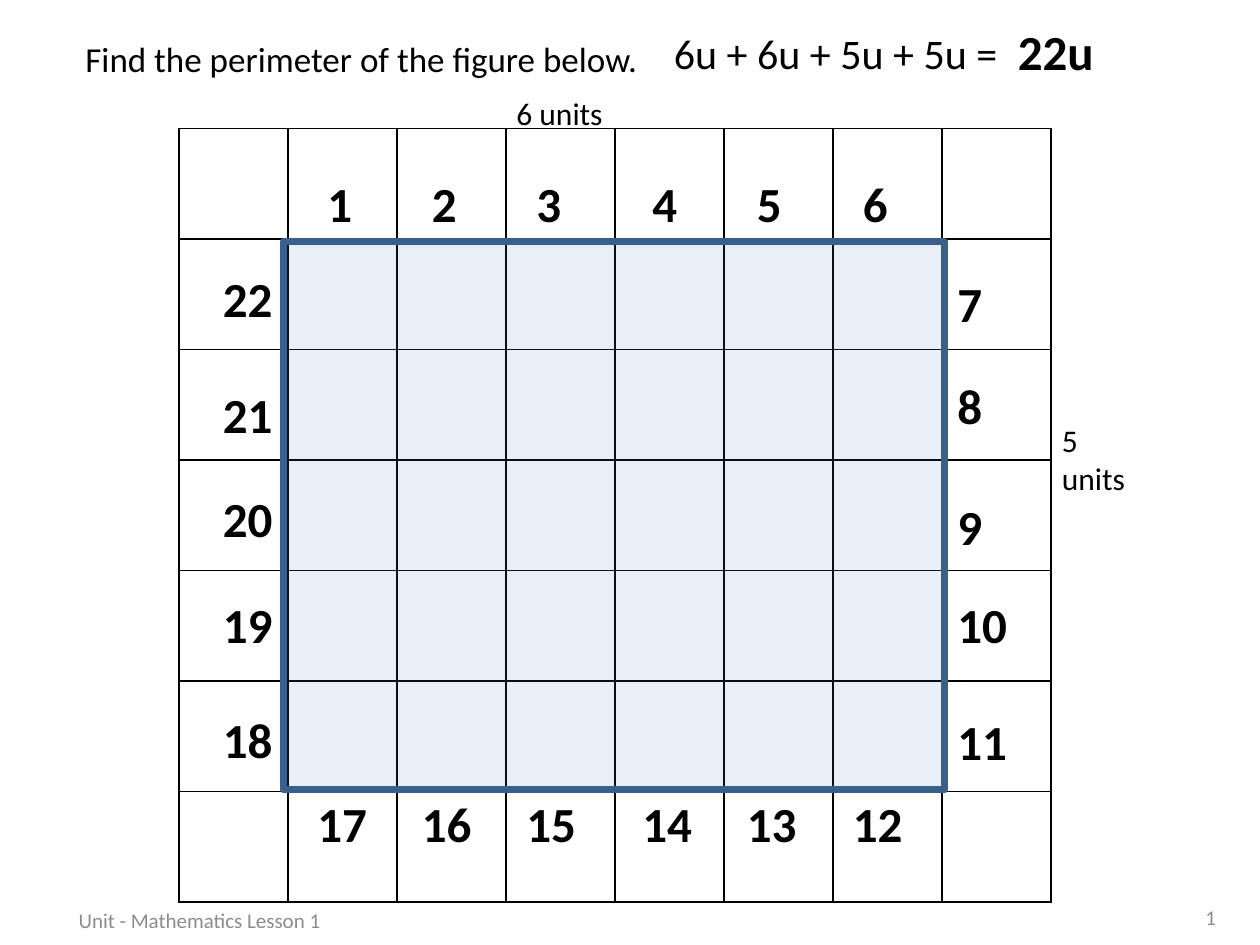
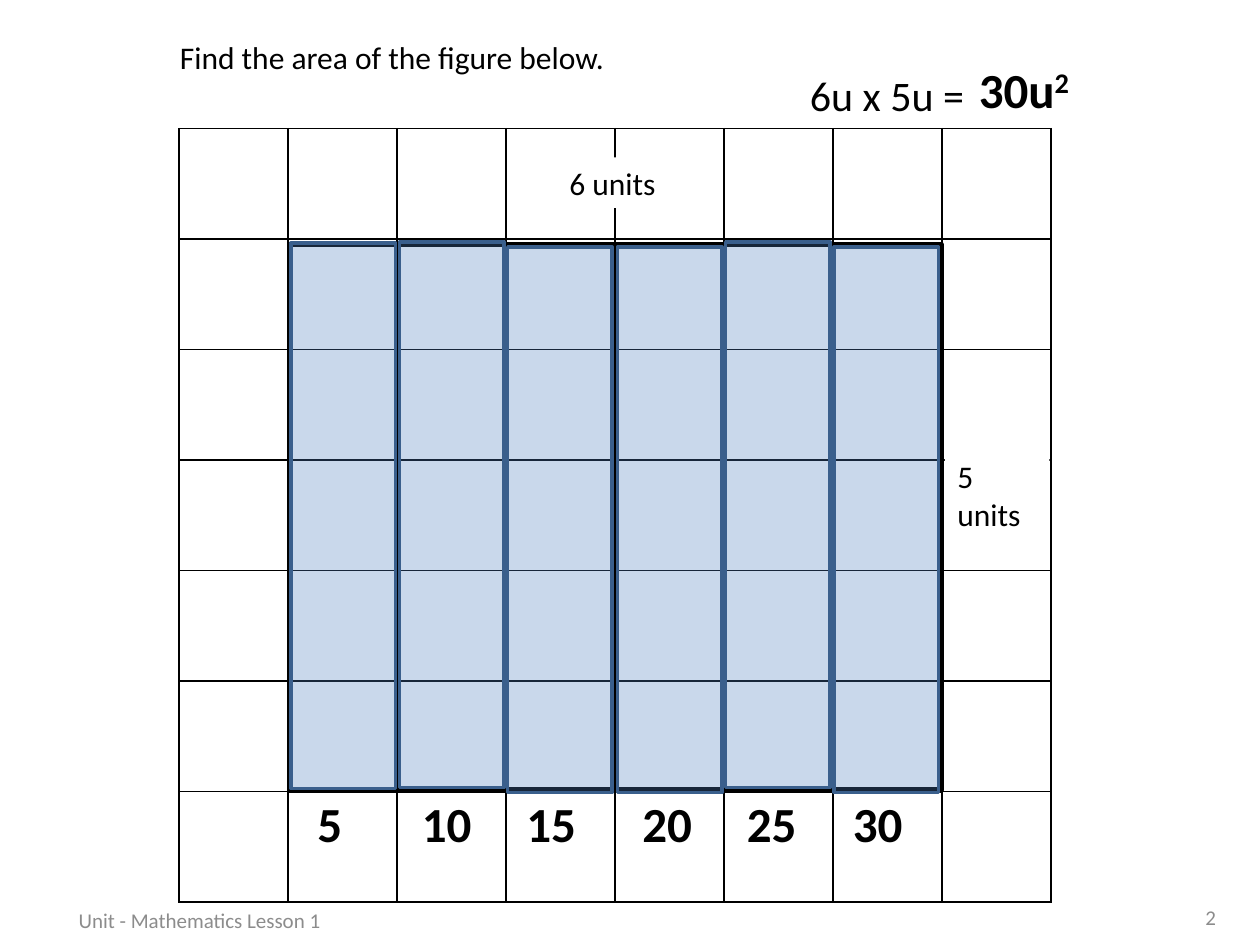
from lxml import etree
from pptx import Presentation
from pptx.dml.color import RGBColor
from pptx.enum.shapes import MSO_SHAPE
from pptx.enum.text import MSO_ANCHOR, MSO_AUTO_SIZE, PP_ALIGN
from pptx.oxml.ns import qn
from pptx.util import Emu, Pt

RECT = MSO_SHAPE.RECTANGLE
TOP, MIDDLE = MSO_ANCHOR.TOP, MSO_ANCHOR.MIDDLE
LEFT, CENTER, RIGHT = PP_ALIGN.LEFT, PP_ALIGN.CENTER, PP_ALIGN.RIGHT
FIT, FIXED = MSO_AUTO_SIZE.SHAPE_TO_FIT_TEXT, MSO_AUTO_SIZE.NONE

EMU_PER_PX = 9144
FONT = "Calibri"
COLORS = {"ink": "000000", "paper": "FFFFFF", "blue": "4F81BD",
          "outline": "3A5F8C", "footer": "8C8C8C"}
FOOTER = "Unit - Mathematics Lesson 1"

GRID_COLS, GRID_ROWS = 8, 7
COUNT_X = [242, 325, 408, 500, 583, 667]
TOP_COUNT_Y, BOTTOM_COUNT_Y = 133, 625
RIGHT_COUNT_Y = [212, 293, 389, 467, 560]
LEFT_COUNT_Y = [558, 467, 383, 300, 208]
STRIP_Y = [193, 192, 196, 196, 192, 196]
STRIP_X, STRIP_PITCH = 231, 86.2


def px(n):
    """Turn px into EMU."""
    return Emu(n * EMU_PER_PX)


def rgb(name):
    """Look up a named colour."""
    return RGBColor.from_string(COLORS[name])


def box(*at):
    """Turn left, top, width and height from px into EMU."""
    return [px(n) for n in at]


def add_run(p, text, size, bold=False, color="ink", baseline=0):
    """Append one formatted run to a paragraph."""
    r = p.add_run()
    r.text = text
    r.font.name, r.font.size, r.font.bold = FONT, Pt(size), bold
    r.font.color.rgb = rgb(color)
    if baseline:
        r.font._element.set("baseline", str(baseline * 1000))


def add_text(shapes, at, text, size, bold=False, color="ink", align=LEFT,
             anchor=TOP, fit=FIT, fill=None):
    """Add a wrapping text box and return its paragraph."""
    sp = shapes.add_textbox(*box(*at))
    if fill:
        sp.fill.solid()
        sp.fill.fore_color.rgb = rgb(fill)
    tf = sp.text_frame
    tf.word_wrap, tf.auto_size, tf.vertical_anchor = True, fit, anchor
    p = tf.paragraphs[0]
    p.alignment = align
    add_run(p, text, size, bold, color)
    return p


def add_count(shapes, x, y, n):
    """Add one bold counting number."""
    add_text(shapes, (x, y, 50 if n < 10 else 67, 57), str(n), 28, bold=True)


def add_rect(shapes, at, line, width, alpha=None):
    """Add an outlined rectangle, tinted blue when alpha is given."""
    sp = shapes.add_shape(RECT, *box(*at))
    sp.shadow.inherit = False
    sp.line.color.rgb, sp.line.width = rgb(line), Pt(width)
    if alpha is None:
        sp.fill.background()
    else:
        sp.fill.solid()
        sp.fill.fore_color.rgb = rgb("blue")
        clr = sp._element.spPr.find(qn("a:solidFill"))[0]
        etree.SubElement(clr, qn("a:alpha"), val=str(alpha * 1000))


def style_cell(cell):
    """Give a cell a white fill and thin black borders."""
    tcPr = cell._tc.get_or_add_tcPr()
    for side in "LRTB":
        ln = etree.SubElement(tcPr, qn(f"a:ln{side}"), w=str(Pt(1)))
        fill = etree.SubElement(ln, qn("a:solidFill"))
        etree.SubElement(fill, qn("a:srgbClr"), val=COLORS["ink"])
    cell.fill.solid()
    cell.fill.fore_color.rgb = rgb("paper")


def add_grid(s):
    """Add the table that serves as unit grid."""
    left, top, width, height = box(142, 102, 692, 614)
    table = s.shapes.add_table(GRID_ROWS, GRID_COLS, left, top, width, height).table
    table.first_row = table.horz_banding = False
    for col in table.columns:
        col.width = width // GRID_COLS
    for row in table.rows:
        row.height = height // GRID_ROWS
    for cell in table.iter_cells():
        style_cell(cell)


def add_footer(s, number):
    """Add the slide number and lesson name."""
    style = dict(size=12, color="footer", anchor=MIDDLE, fit=FIXED)
    add_text(s.shapes, (925, 708, 50, 40), str(number), align=RIGHT, **style)
    add_text(s.shapes, (0, 710, 317, 40), FOOTER, align=CENTER, **style)


def new_slide(prs):
    """Add a blank slide with the unit grid."""
    s = prs.slides.add_slide(prs.slide_layouts[6])
    add_grid(s)
    return s


def perimeter_slide(prs):
    """Count the units around the rectangle."""
    s = new_slide(prs)
    shapes = s.shapes
    add_text(shapes, (58, 25, 467, 44), "Find the perimeter of the figure below.", 20)
    add_rect(shapes, (225, 192, 525, 435), "outline", 4, alpha=12)
    add_text(shapes, (400, 70, 108, 40), "6 units", 18)
    add_text(shapes, (833, 329, 83, 71), "5 units", 18)
    spots = [(x + 8, TOP_COUNT_Y) for x in COUNT_X]
    spots += [(750, y) for y in RIGHT_COUNT_Y]
    spots += [(x, BOTTOM_COUNT_Y) for x in reversed(COUNT_X)]
    spots += [(167, y) for y in LEFT_COUNT_Y]
    for n, (x, y) in enumerate(spots, 1):
        add_count(shapes, x, y, n)
    add_text(shapes, (525, 17, 292, 50), "6u + 6u + 5u + 5u =", 24)
    add_text(shapes, (798, 12, 100, 57), "22u", 28, bold=True)
    add_footer(s, 1)


def area_slide(prs):
    """Count the area in column strips of five."""
    s = new_slide(prs)
    shapes = s.shapes
    add_text(shapes, (133, 25, 417, 40), "Find the area of the figure below.", 18)
    add_text(shapes, (442, 125, 108, 40), "6 units", 18, fill="paper")
    add_text(shapes, (750, 358, 83, 71), "5 units", 18, fill="paper")
    add_text(shapes, (633, 50, 167, 50), "6u x 5u =", 24)
    p = add_text(shapes, (767, 42, 100, 57), "30u", 28, bold=True)
    add_run(p, "2", 28, bold=True, baseline=30)
    add_rect(shapes, (230, 194, 517, 433), "ink", 3)
    for i, (x, y) in enumerate(zip(COUNT_X, STRIP_Y)):
        strip = shapes.add_group_shape().shapes
        add_count(strip, x, BOTTOM_COUNT_Y, 5 * (i + 1))
        strip_x = round(STRIP_X + STRIP_PITCH * i)
        add_rect(strip, (strip_x, y, 83, 433), "outline", 2, alpha=30)
    add_footer(s, 2)


def main():
    """Build and save both slides."""
    prs = Presentation()
    prs.slide_width, prs.slide_height = px(1000), px(750)
    perimeter_slide(prs)
    area_slide(prs)
    prs.save("out.pptx")


if __name__ == "__main__":
    main()
